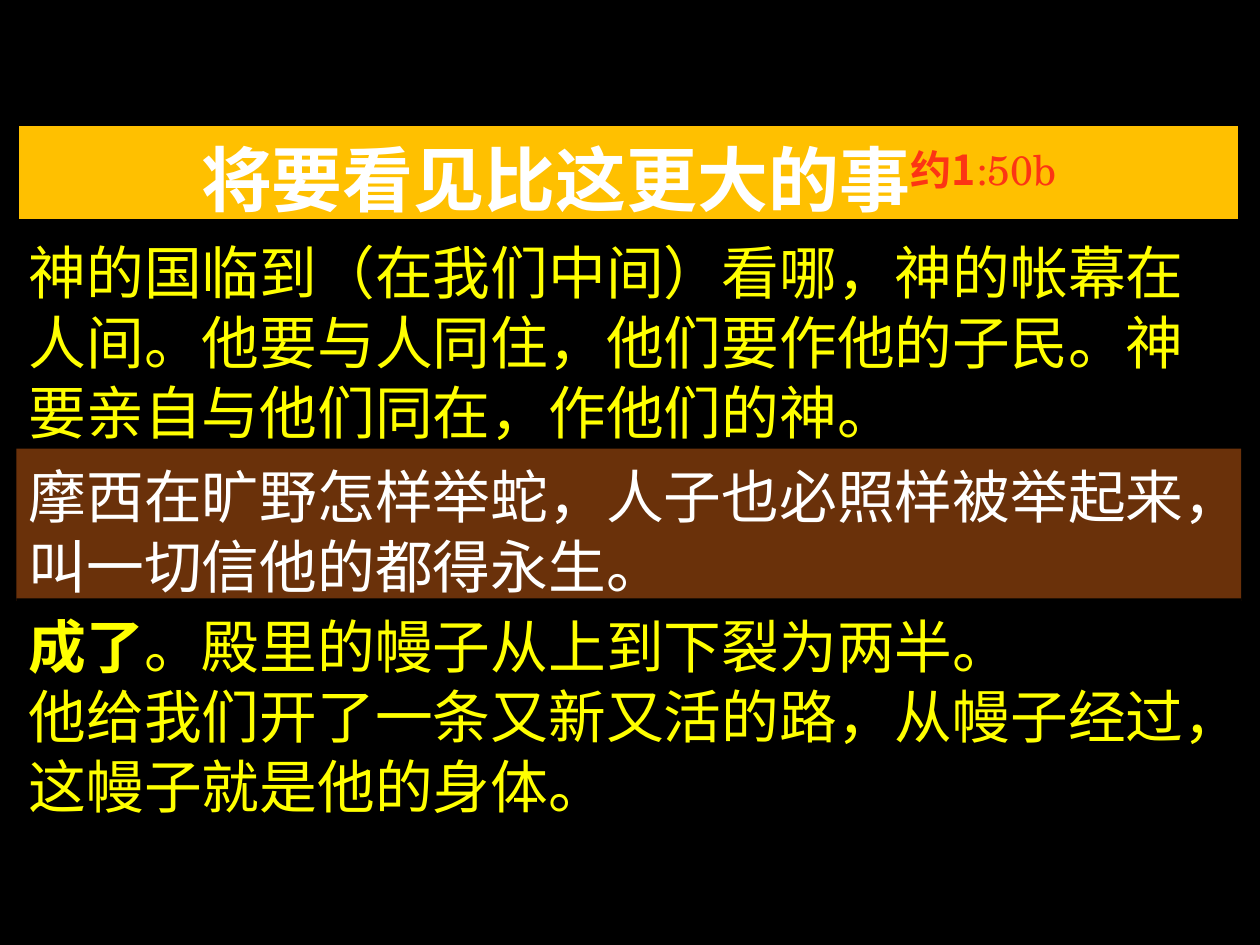
from lxml.etree import SubElement
from pptx import Presentation
from pptx.dml.color import RGBColor
from pptx.enum.shapes import MSO_SHAPE as Shape
from pptx.enum.text import MSO_ANCHOR as Anchor, MSO_AUTO_SIZE as AutoSize, PP_ALIGN as Align
from pptx.oxml.ns import qn
from pptx.util import Inches, Pt

SANS, SERIF = "Noto Sans CJK SC", "TeX Gyre Schola"
WHITE, YELLOW, BLACK = "FFFFFF", "FFFF00", "000000"
GOLD, BROWN, RED = "FFC000", "6A310A", "FC3514"
LEFT, WIDTH = 0.13, 9.72
BODY_SIZE, TITLE_SIZE = 33, 40.5


def rgb(value):
    return RGBColor.from_string(value)


def add_run(p, text, size=BODY_SIZE, color=YELLOW, font=SANS, bold=False, raised=False):
    r = p.add_run()
    r.text = text
    r.font.size, r.font.bold, r.font.name = Pt(size), bold, font
    r.font.color.rgb = rgb(color)
    # East Asian font and superscript
    r_pr = r.font._element
    SubElement(r_pr, qn("a:ea")).set("typeface", SANS)
    if raised:
        r_pr.set("baseline", "30000")


def set_frame(sp, top, height, fill=None):
    sp.left, sp.top = Inches(LEFT), Inches(top)
    sp.width, sp.height = Inches(WIDTH), Inches(height)
    if fill:
        sp.fill.solid()
        sp.fill.fore_color.rgb = rgb(fill)
    tf = sp.text_frame
    tf.word_wrap, tf.auto_size = True, AutoSize.NONE
    tf.vertical_anchor = Anchor.TOP
    tf.margin_left = tf.margin_right = Inches(0.1)
    tf.margin_top, tf.margin_bottom = Inches(0.09), 0
    return tf


def set_paragraph(p, align=Align.LEFT, leading=40):
    p.alignment, p.line_spacing = align, Pt(leading)
    p.space_before = p.space_after = Pt(0)
    return p


def add_title(s):
    sp = s.shapes.title
    tf = set_frame(sp, 0.98, 0.78, GOLD)
    sp.line.color.rgb, sp.line.width = rgb(BLACK), Pt(3)
    p = set_paragraph(tf.paragraphs[0], Align.CENTER, 49)
    add_run(p, "将要看见比这更大的事", size=TITLE_SIZE, color=WHITE, bold=True)
    add_run(p, "约1", size=TITLE_SIZE, color=RED, bold=True, raised=True)
    add_run(p, ":50b", size=TITLE_SIZE, color=RED, font=SERIF, raised=True)


def add_passage(s, top, height, paragraphs, fill=None):
    """Each paragraph is a list of (text, format) runs."""
    box = (Inches(LEFT), Inches(top), Inches(WIDTH), Inches(height))
    if fill:
        sp = s.shapes.add_shape(Shape.RECTANGLE, *box)
        sp.shadow.inherit = False
        sp.line.fill.background()
    else:
        sp = s.shapes.add_textbox(*box)
    tf = set_frame(sp, top, height, fill)
    for i, runs in enumerate(paragraphs):
        p = set_paragraph(tf.add_paragraph() if i else tf.paragraphs[0])
        for text, style in runs:
            add_run(p, text, **style)


def main():
    prs = Presentation()
    prs.slide_width, prs.slide_height = Inches(10), Inches(7.5)
    s = prs.slides.add_slide(prs.slide_layouts[5])
    s.background.fill.solid()
    s.background.fill.fore_color.rgb = rgb(BLACK)

    add_title(s)
    # Three passages, from top to bottom
    add_passage(s, 1.78, 1.77, [[(
        "神的国临到（在我们中间）看哪，神的帐幕在人间。他要与人同住，"
        "他们要作他的子民。神要亲自与他们同在，作他们的神。", {"font": SERIF})]])
    add_passage(s, 3.56, 1.21, [[(
        "摩西在旷野怎样举蛇，人子也必照样被举起来，叫一切信他的都得永生。",
        {"color": WHITE})]], fill=BROWN)
    add_passage(s, 4.75, 1.77, [
        [("成了", {"bold": True}), ("。殿里的幔子从上到下裂为两半。", {})],
        [("他给我们开了一条又新又活的路，从幔子经过，这幔子就是他的身体。", {})],
    ], fill=BLACK)
    prs.save("out.pptx")


if __name__ == "__main__":
    main()
